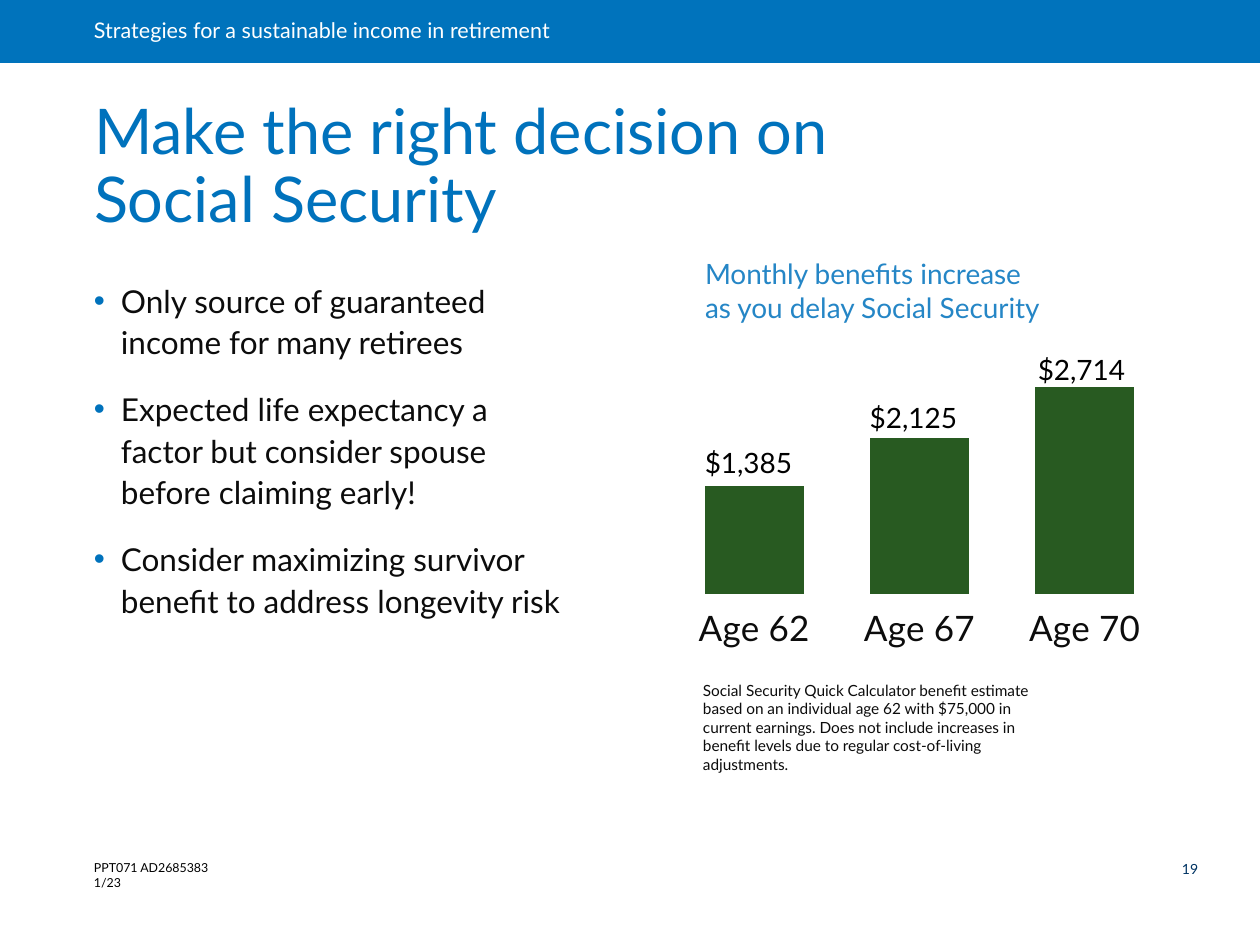
import copy

import lxml.etree
import pptx
import pptx.chart.data
import pptx.dml.color
import pptx.enum.chart
import pptx.enum.shapes
import pptx.enum.text
import pptx.oxml.ns
import pptx.util

ALIGN = pptx.enum.text.PP_ALIGN
ANCHOR = pptx.enum.text.MSO_ANCHOR
TICKS = pptx.enum.chart
qn = pptx.oxml.ns.qn


def px(length):
    return pptx.util.Emu(length * 914400 // 126)


def color(value):
    return pptx.dml.color.RGBColor.from_string(value)


def apply(target, values):
    for name, value in values.items():
        setattr(target, name, value)


class Deck:
    """Hold the style and the current slide, and draw each kind of element."""

    font = "Lato"
    blue = "0072BC"
    ink = "0C0C0C"
    black = "000000"

    def __init__(self):
        self.presentation = pptx.Presentation()
        apply(self.presentation, {"slide_width": px(1260), "slide_height": px(945)})
        self.slide = self.presentation.slides.add_slide(self.presentation.slide_layouts[5])

    def style_font(self, font, size, fill):
        apply(font, {"name": self.font, "size": pptx.util.Pt(size)})
        font.color.rgb = color(fill)

    def bullet(self, paragraph):
        properties = paragraph._p.get_or_add_pPr()
        properties.set("marL", str(px(27)))
        properties.set("indent", str(px(-27)))
        tint = lxml.etree.SubElement(properties, qn("a:buClr"))
        lxml.etree.SubElement(tint, qn("a:srgbClr")).set("val", self.blue)
        lxml.etree.SubElement(properties, qn("a:buFont")).set("typeface", "Arial")
        lxml.etree.SubElement(properties, qn("a:buChar")).set("char", "•")

    def fill_text(self, shape, paragraphs, size, fill, insets=(13, 6, 13, 6), anchor=ANCHOR.TOP,
                  align=ALIGN.LEFT, spacing=1.0, gap=0, wrap=True, bullets=False):
        frame = shape.text_frame
        sides = ("margin_left", "margin_top", "margin_right", "margin_bottom")
        apply(frame, dict(zip(sides, map(px, insets))))
        apply(frame, {"word_wrap": wrap, "vertical_anchor": anchor,
                      "auto_size": pptx.enum.text.MSO_AUTO_SIZE.NONE})
        frame.text = "\n".join(paragraphs)
        for index, paragraph in enumerate(frame.paragraphs):
            if bullets:
                self.bullet(paragraph)
            apply(paragraph, {"alignment": align, "line_spacing": spacing,
                              "space_before": pptx.util.Pt(gap if index else 0)})
            for run in paragraph.runs:
                self.style_font(run.font, size, fill)
            for line_break in paragraph._p.findall(qn("a:br")):
                line_break.insert(0, copy.deepcopy(paragraph.runs[0]._r.rPr))

    def text(self, box, paragraphs, size, fill, **layout):
        shape = self.slide.shapes.add_textbox(*map(px, box))
        self.fill_text(shape, paragraphs, size, fill, **layout)

    def title(self, box, words):
        heading = self.slide.shapes.title
        apply(heading, dict(zip(("left", "top", "width", "height"), map(px, box))))
        self.fill_text(heading, [words], 36, self.blue, insets=(14, 8, 14, 8),
                       anchor=ANCHOR.BOTTOM, spacing=0.9)

    def band(self, box, words):
        strip = self.slide.shapes.add_shape(pptx.enum.shapes.MSO_SHAPE.RECTANGLE, *map(px, box))
        strip.shadow.inherit = False
        strip.fill.solid()
        strip.fill.fore_color.rgb = color("0073BC")
        strip.line.fill.background()
        self.fill_text(strip, [words], 12.3, "FFFFFF", insets=(94, 0, 28, 0),
                       anchor=ANCHOR.MIDDLE, spacing=0.9)

    def place_plot(self, chart, plot_box):
        area = chart._chartSpace.chart.plotArea
        for empty in area.findall(qn("c:layout")):
            area.remove(empty)
        layout = lxml.etree.Element(qn("c:layout"))
        manual = lxml.etree.SubElement(layout, qn("c:manualLayout"))
        settings = {"layoutTarget": "inner", "xMode": "edge", "yMode": "edge",
                    **dict(zip("xywh", plot_box))}
        for tag, value in settings.items():
            lxml.etree.SubElement(manual, qn(f"c:{tag}")).set("val", str(value))
        area.insert(0, layout)

    def columns(self, box, ages, heights):
        data = pptx.chart.data.CategoryChartData()
        data.categories = ages
        data.add_series("Series 1", heights)
        chart = self.slide.shapes.add_chart(
            TICKS.XL_CHART_TYPE.COLUMN_STACKED, *map(px, box), data).chart
        apply(chart, {"has_legend": False, "has_title": False})
        self.style_font(chart.font, 14, "003463")
        bars = chart.plots[0]
        apply(bars, {"gap_width": 66, "overlap": 100, "vary_by_categories": False})
        fill = bars.series[0].format.fill
        fill.solid()
        fill.fore_color.rgb = color("285A21")
        bare = {"has_major_gridlines": False, "major_tick_mark": TICKS.XL_TICK_MARK.NONE,
                "minor_tick_mark": TICKS.XL_TICK_MARK.NONE}
        low, none = TICKS.XL_TICK_LABEL_POSITION.LOW, TICKS.XL_TICK_LABEL_POSITION.NONE
        for axis, labels in ((chart.category_axis, low), (chart.value_axis, none)):
            apply(axis, {**bare, "tick_label_position": labels})
            axis.format.line.fill.background()
        apply(chart.value_axis, {"minimum_scale": 0, "maximum_scale": 113})
        self.style_font(chart.category_axis.tick_labels.font, 20, self.ink)
        self.place_plot(chart, (0.02, 0.03, 0.93, 0.72))


def main():
    deck = Deck()
    deck.band((0, 0, 1260, 63), "Strategies for a sustainable income in retirement")
    deck.title((80, 80, 1086, 164), "Make the right decision on\vSocial Security")
    deck.text((80, 270, 1086, 523), [
        "Only source of guaranteed\vincome for many retirees",
        "Expected life expectancy a\vfactor but consider spouse\vbefore claiming early!",
        "Consider maximizing survivor\vbenefit to address longevity risk",
    ], 18, deck.ink, insets=(14, 8, 14, 8), spacing=1.1, gap=14.4, bullets=True)
    deck.text((692, 251, 474, 81),
              ["Monthly benefits increase\vas you delay Social Security"], 16, "2586C6")
    deck.columns((661, 350, 533, 325), ("Age 62", "Age 67", "Age 70"), (52, 75, 100))
    for left, top, benefit in ((692, 440, "$1,385"), (857, 394, "$2,125"), (1025, 347, "$2,714")):
        deck.text((left, top, 113, 47), [benefit], 16, deck.black, align=ALIGN.CENTER, wrap=False)
    deck.text((690, 675, 365, 87), [
        "Social Security Quick Calculator benefit estimate based on an individual age 62 "
        "with $75,000 in current earnings. Does not include increases in benefit levels "
        "due to regular cost-of-living adjustments."], 8.8, deck.ink)
    deck.text((81, 854, 154, 42), ["PPT071 AD2685383\v1/23"], 7.1, deck.black, wrap=False)
    deck.text((1166, 857, 63, 26), ["19"], 8, "003463", insets=(16, 5, 5, 5), spacing=0.9)
    deck.presentation.save("out.pptx")


if __name__ == "__main__":
    main()
